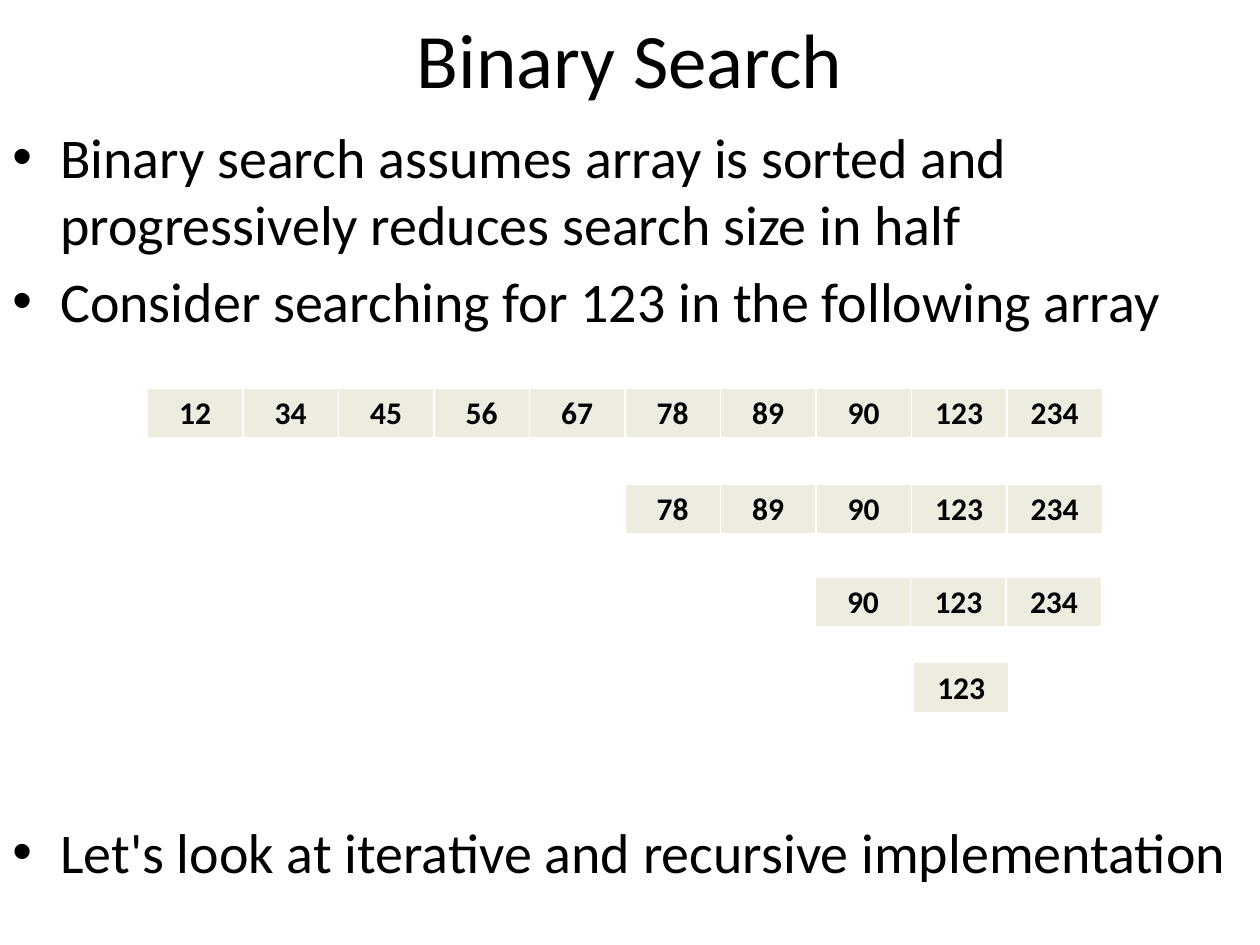
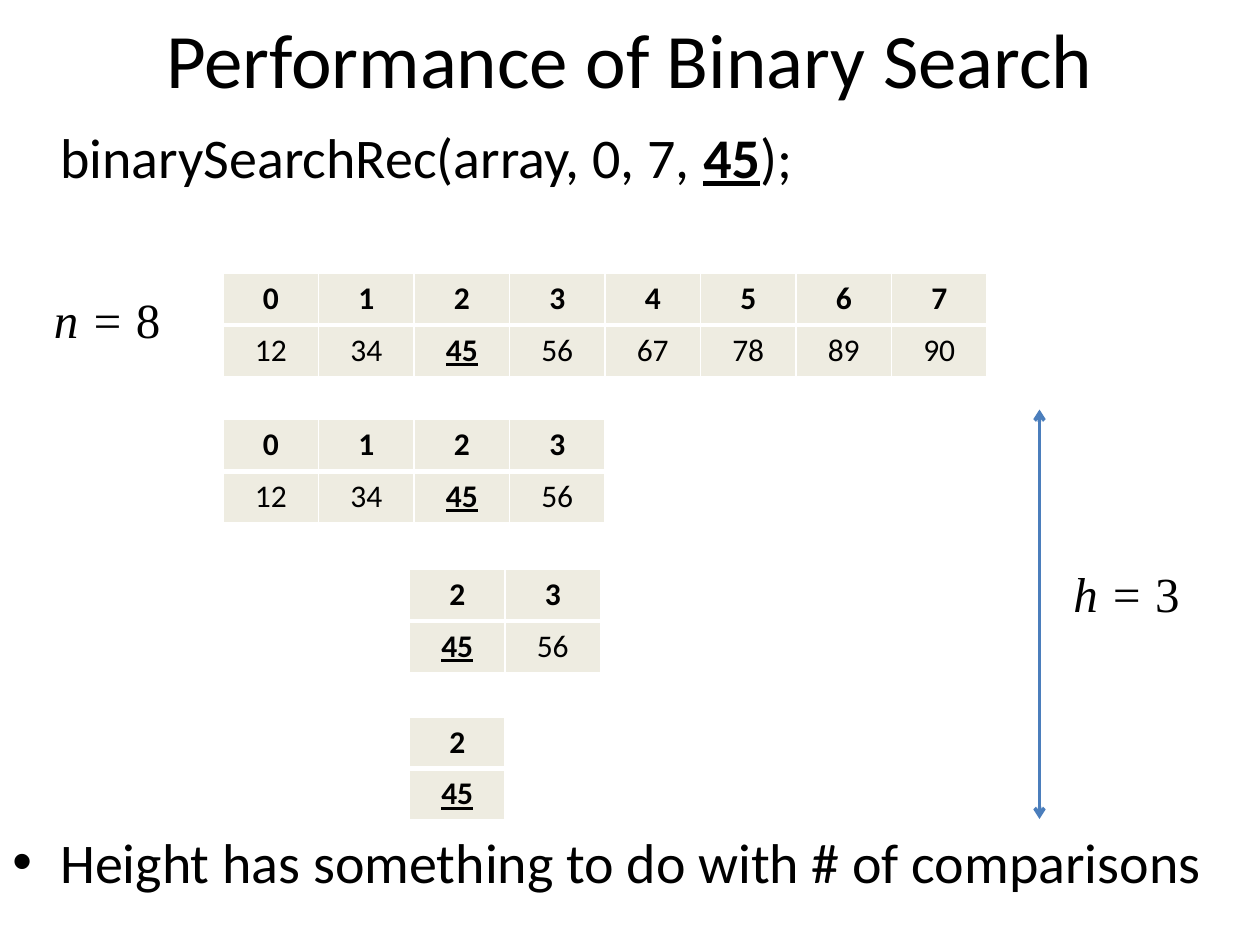
from dataclasses import dataclass

from lxml import etree
from pptx import Presentation
from pptx.dml.color import RGBColor
from pptx.enum.shapes import MSO_CONNECTOR
from pptx.enum.text import MSO_ANCHOR, PP_ALIGN
from pptx.oxml.ns import qn
from pptx.util import Inches, Pt

CENTER, LEFT = PP_ALIGN.CENTER, PP_ALIGN.LEFT
MIDDLE, TOP = MSO_ANCHOR.MIDDLE, MSO_ANCHOR.TOP
STRAIGHT = MSO_CONNECTOR.STRAIGHT


@dataclass(frozen=True)
class Theme:
    text: RGBColor = RGBColor(0x00, 0x00, 0x00)
    cell: RGBColor = RGBColor(0xEE, 0xEC, 0xE1)
    arrow: RGBColor = RGBColor(0x4B, 0x7E, 0xBC)
    border: str = "FFFFFF"
    font: str = "Calibri"
    math_font: str = "Times New Roman"
    title_size: int = 44
    body_size: int = 32
    math_size: int = 28
    cell_size: int = 18


THEME = Theme()
TITLE_BOX = (0.5, 0, 9, 0.92)
BODY_BOX = (0, 0.92, 10, 2)
COLUMN_WIDTH = Inches(7.58 / 10)
ROW_HEIGHT = Inches(0.41)
HANGING = Inches(0.38)


def add_text(slide, box, paragraphs, size, font=THEME.font, align=LEFT,
             anchor=TOP, wrap=True, indent=0, bullet=False):
    """Add a text box; each paragraph is a list of (text, style letters from b, i, u)."""
    shape = slide.shapes.add_textbox(*map(Inches, box))
    text_frame = shape.text_frame
    text_frame.word_wrap = wrap
    text_frame.vertical_anchor = anchor
    for number, pieces in enumerate(paragraphs):
        paragraph = text_frame.add_paragraph() if number else text_frame.paragraphs[0]
        paragraph.alignment = align
        if number:
            paragraph.space_before = Pt(5.75)
        properties = paragraph._p.get_or_add_pPr()
        properties.set("marL", str(indent))
        if bullet:
            properties.set("indent", str(-indent))
            etree.SubElement(properties, qn("a:buFont"), typeface="Arial")
            etree.SubElement(properties, qn("a:buChar"), char="•")
        for text, style in pieces:
            run = paragraph.add_run()
            run.text = text
            run.font.name = font
            run.font.size = Pt(size)
            run.font.color.rgb = THEME.text
            run.font.bold = "b" in style
            run.font.italic = "i" in style
            run.font.underline = "u" in style


def add_array(slide, left, top, rows, target=None):
    """Add an array as a table: bold first row, target underlined below it."""
    column_count = len(rows[0])
    table = slide.shapes.add_table(
        len(rows), column_count, Inches(left), Inches(top),
        COLUMN_WIDTH * column_count, ROW_HEIGHT * len(rows)).table
    table.first_row = False
    table.horz_banding = False
    for column in table.columns:
        column.width = COLUMN_WIDTH
    for row_index, values in enumerate(rows):
        table.rows[row_index].height = ROW_HEIGHT
        border_widths = {
            "a:lnL": 1, "a:lnR": 1,
            "a:lnT": 3 if row_index else 1,
            "a:lnB": 1 if row_index else 3,
        }
        for column_index, value in enumerate(values):
            cell = table.cell(row_index, column_index)
            cell_properties = cell._tc.get_or_add_tcPr()
            for tag, width in border_widths.items():
                border = etree.SubElement(cell_properties, qn(tag), w=str(Pt(width)))
                fill = etree.SubElement(border, qn("a:solidFill"))
                etree.SubElement(fill, qn("a:srgbClr"), val=THEME.border)
            cell.fill.solid()
            cell.fill.fore_color.rgb = THEME.cell
            cell.text_frame.text = str(value)
            paragraph = cell.text_frame.paragraphs[0]
            paragraph.alignment = CENTER
            is_target = row_index > 0 and value == target
            font = paragraph.runs[0].font
            font.name = THEME.font
            font.size = Pt(THEME.cell_size)
            font.color.rgb = THEME.text
            font.bold = row_index == 0 or is_target
            font.underline = is_target


presentation = Presentation()
presentation.slide_width = Inches(10)
presentation.slide_height = Inches(7.5)
blank_layout = presentation.slide_layouts[6]

# Titles and closing bullets
slides = []
for title, closing, closing_top in [
    ("Binary Search", "Let's look at iterative and recursive implementation", 6.44),
    ("Performance of Binary Search", "Height has something to do with # of comparisons", 6.52),
]:
    slide = presentation.slides.add_slide(blank_layout)
    add_text(slide, TITLE_BOX, [[(title, "")]], THEME.title_size,
             align=CENTER, anchor=MIDDLE)
    add_text(slide, (0, closing_top, 10, 0.7), [[(closing, "")]], THEME.body_size,
             indent=HANGING, bullet=True)
    slides.append(slide)
search_slide, performance_slide = slides

# Binary Search: the part of the array still searched
add_text(search_slide, BODY_BOX, [
    [("Binary search assumes array is sorted and progressively reduces search size in half", "")],
    [("Consider searching for 123 in the following array", "")],
], THEME.body_size, indent=HANGING, bullet=True)

sorted_values = [12, 34, 45, 56, 67, 78, 89, 90, 123, 234]
for left, top, start, stop in [
    (1.17, 3.08, 0, 10), (4.96, 3.84, 5, 10), (6.47, 4.58, 7, 10), (7.25, 5.26, 8, 9),
]:
    add_array(search_slide, left, top, [sorted_values[start:stop]])

# Performance: indexes above values, halved until the target is left
add_text(performance_slide, BODY_BOX, [
    [("binarySearchRec(array, 0, 7, ", ""), ("45", "bu"), (");", "")],
], THEME.body_size, indent=HANGING)

for left, top, start, stop in [
    (1.77, 2.17, 0, 8), (1.77, 3.33, 0, 4), (3.25, 4.52, 2, 4), (3.25, 5.69, 2, 3),
]:
    add_array(performance_slide, left, top,
              [range(start, stop), sorted_values[start:stop]], target=45)

for left, top, variable, value in [(0.33, 2.25, "n = ", "8"), (8.42, 4.42, "h = ", "3")]:
    add_text(performance_slide, (left, top, 1.06, 0.57), [[(variable, "i"), (value, "")]],
             THEME.math_size, font=THEME.math_font, wrap=False)

height_arrow = performance_slide.shapes.add_connector(
    STRAIGHT, Inches(8.25), Inches(3.25), Inches(8.25), Inches(6.5))
height_arrow.line.color.rgb = THEME.arrow
height_arrow.line.width = Pt(2)
arrow_line = height_arrow.line._get_or_add_ln()
for end in ("a:headEnd", "a:tailEnd"):
    etree.SubElement(arrow_line, qn(end), type="arrow")
etree.SubElement(height_arrow._element.spPr, qn("a:effectLst"))

presentation.save("out.pptx")
